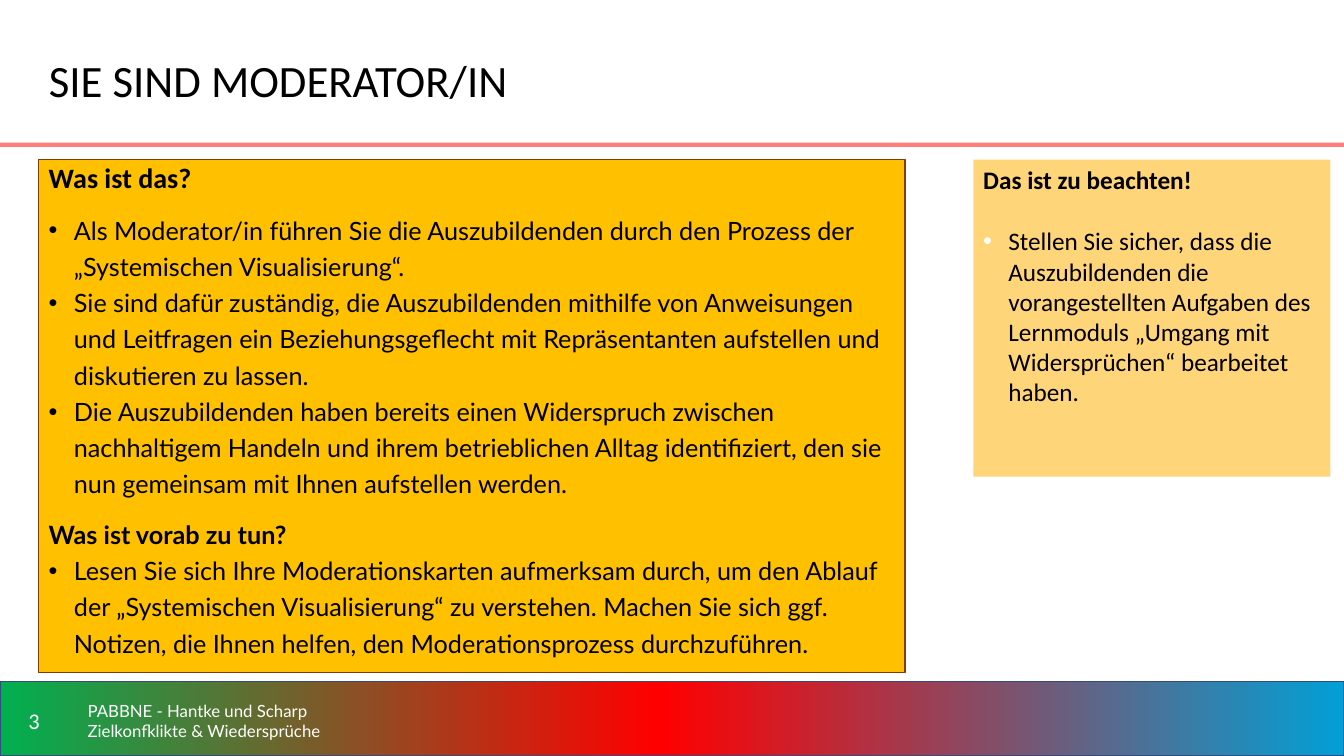
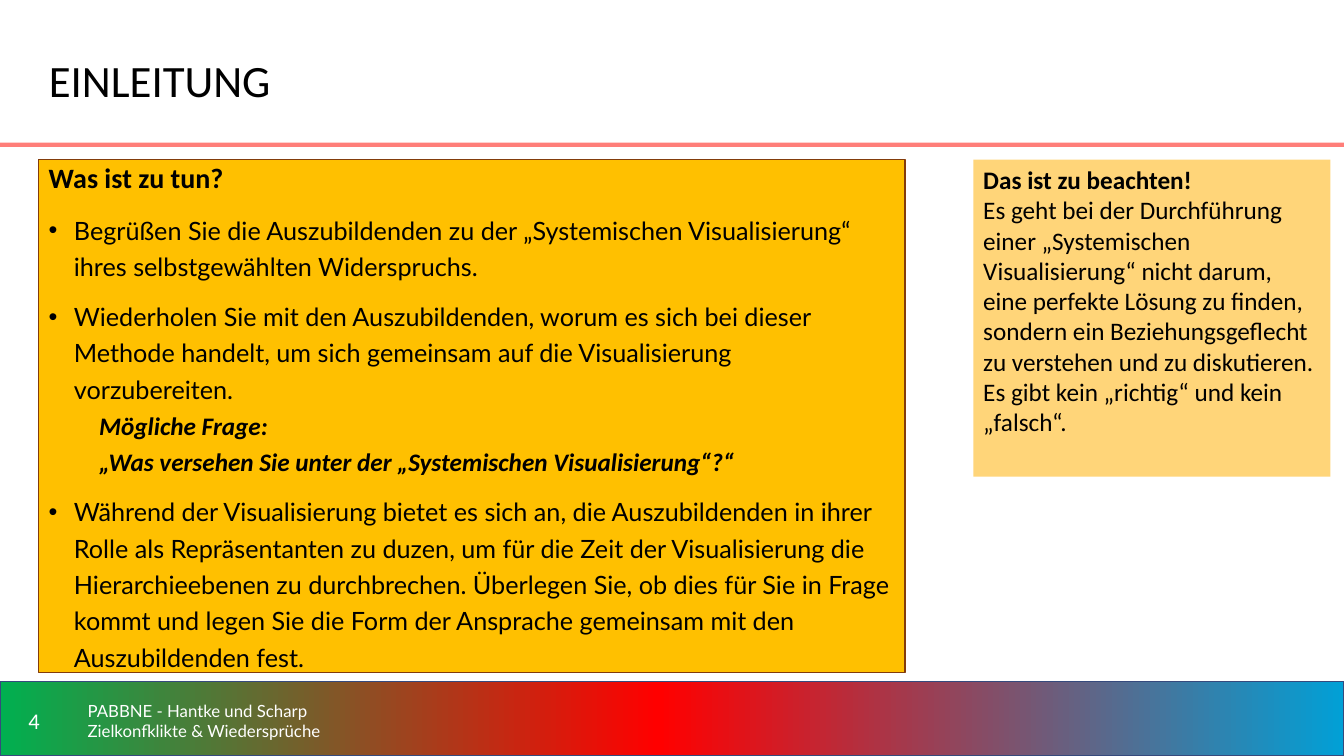
"""Build two moderator cards with a shared title, rule and footer band."""
import copy
import dataclasses
import lxml.etree
import pptx
import pptx.dml.color
import pptx.enum.shapes
import pptx.enum.text
import pptx.oxml.ns
import pptx.util

RGB = pptx.dml.color.RGBColor
ALIGN = pptx.enum.text.PP_ALIGN
ANCHOR = pptx.enum.text.MSO_ANCHOR
QN = pptx.oxml.ns.qn

BLACK = RGB(0x00, 0x00, 0x00)
WHITE = RGB(0xFF, 0xFF, 0xFF)
GREEN = RGB(0x00, 0xB0, 0x50)
RED = RGB(0xFF, 0x00, 0x00)
BLUE = RGB(0x01, 0xA0, 0xD6)
NAVY = RGB(0x36, 0x4A, 0x7D)
CORAL = RGB(0xFF, 0x7E, 0x79)
AMBER = RGB(0xFF, 0xC0, 0x00)
BROWN = RGB(0x83, 0x3C, 0x0B)
SAND = RGB(0xFF, 0xD5, 0x79)

WIDE, HIGH = 1280, 720
LEFT, TOP = 37, 152
STEP = 24
FOOT = "PABBNE - Hantke und Scharp Zielkonfklikte & Wiedersprüche"


@dataclasses.dataclass(frozen=True)
class Style:
    """Look of one kind of paragraph."""
    font: str = "Calibri"
    size: int = 18
    color: RGB = BLACK
    bold: bool = False
    slant: bool = False
    line: float = 1.0
    inset: int = 0
    dot: RGB = None
    align: ALIGN = ALIGN.LEFT


TITLE = Style(size=32)
NUMBER = Style(size=16, color=WHITE, align=ALIGN.CENTER)
FOOTER = Style("Lato", 12, WHITE)
HEAD = Style(size=20, bold=True, line=0.9)
SUBHEAD = Style("Lato", bold=True, line=1.2)
POINT = Style("Lato", line=1.2, inset=STEP, dot=BLACK)
QUOTE = Style(bold=True, slant=True, line=1.2, inset=2 * STEP)
NOTE_HEAD = Style(bold=True)
NOTE = Style()
NOTE_POINT = Style(inset=STEP, dot=WHITE)

CARDS = [
    ("3", "SIE SIND MODERATOR/IN", [
        ("Was ist das?", HEAD, 0),
        ("Als Moderator/in führen Sie die Auszubildenden durch den Prozess der "
         "„Systemischen Visualisierung“.", POINT, 10),
        ("Sie sind dafür zuständig, die Auszubildenden mithilfe von Anweisungen und "
         "Leitfragen ein Beziehungsgeflecht mit Repräsentanten aufstellen und "
         "diskutieren zu lassen.", POINT, 0),
        ("Die Auszubildenden haben bereits einen Widerspruch zwischen nachhaltigem "
         "Handeln und ihrem betrieblichen Alltag identifiziert, den sie nun gemeinsam "
         "mit Ihnen aufstellen werden.", POINT, 0),
        ("Was ist vorab zu tun?", SUBHEAD, 10),
        ("Lesen Sie sich Ihre Moderationskarten aufmerksam durch, um den Ablauf der "
         "„Systemischen Visualisierung“ zu verstehen. Machen Sie sich ggf. Notizen, "
         "die Ihnen helfen, den Moderationsprozess durchzuführen.", POINT, 0),
    ], [
        ("Das ist zu beachten!", NOTE_HEAD, 0),
        ("Stellen Sie sicher, dass die Auszubildenden die vorangestellten Aufgaben "
         "des Lernmoduls „Umgang mit Widersprüchen“ bearbeitet haben.",
         NOTE_POINT, 22),
    ]),
    ("4", "EINLEITUNG", [
        ("Was ist zu tun?", HEAD, 0),
        ("Begrüßen Sie die Auszubildenden zu der „Systemischen Visualisierung“ ihres "
         "selbstgewählten Widerspruchs.", POINT, 10),
        ("Wiederholen Sie mit den Auszubildenden, worum es sich bei dieser Methode "
         "handelt, um sich gemeinsam auf die Visualisierung vorzubereiten.",
         POINT, 10),
        ("Mögliche Frage:", QUOTE, 0),
        ("„Was versehen Sie unter der „Systemischen Visualisierung“?“", QUOTE, 0),
        ("Während der Visualisierung bietet es sich an, die Auszubildenden in ihrer "
         "Rolle als Repräsentanten zu duzen, um für die Zeit der Visualisierung die "
         "Hierarchieebenen zu durchbrechen. Überlegen Sie, ob dies für Sie in Frage "
         "kommt und legen Sie die Form der Ansprache gemeinsam mit den "
         "Auszubildenden fest.", POINT, 10),
    ], [
        ("Das ist zu beachten!", NOTE_HEAD, 0),
        ("Es geht bei der Durchführung einer „Systemischen Visualisierung“ nicht "
         "darum, eine perfekte Lösung zu finden, sondern ein Beziehungsgeflecht zu "
         "verstehen und zu diskutieren. Es gibt kein „richtig“ und kein „falsch“.",
         NOTE, 0),
    ]),
]


def px(count):
    """Turn whole pixels into EMU."""
    return pptx.util.Emu(count * 9525)


def indent(para, style):
    """Set the left margin and, if wanted, a hanging bullet."""
    props = para._p.get_or_add_pPr()
    props.set("marL", str(px(style.inset)))
    props.set("indent", str(px(-STEP if style.dot else 0)))
    if style.dot:
        tint = lxml.etree.SubElement(props, QN("a:buClr"))
        lxml.etree.SubElement(tint, QN("a:srgbClr"), val=str(style.dot))
        lxml.etree.SubElement(props, QN("a:buFont"), typeface="Arial")
        lxml.etree.SubElement(props, QN("a:buChar"), char="•")


def write(frame, paras, anchor):
    """Fill a text frame with (text, style, gap) paragraphs."""
    frame.word_wrap = True
    frame.vertical_anchor = anchor
    for index, (text, style, gap) in enumerate(paras):
        para = frame.add_paragraph() if index else frame.paragraphs[0]
        indent(para, style)
        para.alignment = style.align
        para.line_spacing = style.line
        if gap:
            para.space_before = pptx.util.Pt(gap)
        run = para.add_run()
        run.text = text
        font = run.font
        font.name, font.size = style.font, pptx.util.Pt(style.size)
        font.bold, font.italic = style.bold, style.slant
        font.color.rgb = style.color


def label(slide, box, text, style):
    """Add one vertically centred line of text."""
    shape = slide.shapes.add_textbox(*map(px, box))
    write(shape.text_frame, [(text, style, 0)], ANCHOR.MIDDLE)


def block(slide, box, color, edge=None, width=1):
    """Add a flat rectangle, outlined only if an edge colour is given."""
    kind = pptx.enum.shapes.MSO_SHAPE.RECTANGLE
    shape = slide.shapes.add_shape(kind, *map(px, box))
    shape.shadow.inherit = False
    shape.fill.solid()
    shape.fill.fore_color.rgb = color
    if edge:
        shape.line.color.rgb = edge
        shape.line.width = pptx.util.Pt(width)
    else:
        shape.line.fill.background()
    return shape


def blend(shape, stops):
    """Give a shape a left-to-right gradient of (position, colour) stops."""
    fill = shape.fill
    fill.gradient()
    fill.gradient_angle = 0
    group = shape._element.spPr.find(".//" + QN("a:gsLst"))
    while len(group) < len(stops):
        group.append(copy.deepcopy(group[0]))
    for stop, (place, color) in zip(fill.gradient_stops, stops):
        stop.position = place
        stop.color.rgb = color


def frame(slide, number, title):
    """Add the band, rule, title and footer that each slide shares."""
    band = block(slide, (0, 649, WIDE, 71), GREEN, NAVY)
    blend(band, [(0, GREEN), (0.49, RED), (1, BLUE)])
    block(slide, (0, 136, WIDE, 4), CORAL)
    label(slide, (LEFT, 19, 945, 113), title, TITLE)
    label(slide, (0, 657, 65, 59), number, NUMBER)
    label(slide, (74, 657, 267, 59), FOOT, FOOTER)


def main():
    """Build and save the slides."""
    deck = pptx.Presentation()
    deck.slide_width, deck.slide_height = px(WIDE), px(HIGH)
    for number, title, body, note in CARDS:
        slide = deck.slides.add_slide(deck.slide_layouts[6])
        frame(slide, number, title)
        panel = block(slide, (LEFT, TOP, 825, 489), AMBER, BROWN, 0.75)
        write(panel.text_frame, body, ANCHOR.TOP)
        aside = block(slide, (927, TOP, 340, 302), SAND)
        write(aside.text_frame, note, ANCHOR.TOP)
    deck.save("out.pptx")


if __name__ == "__main__":
    main()
